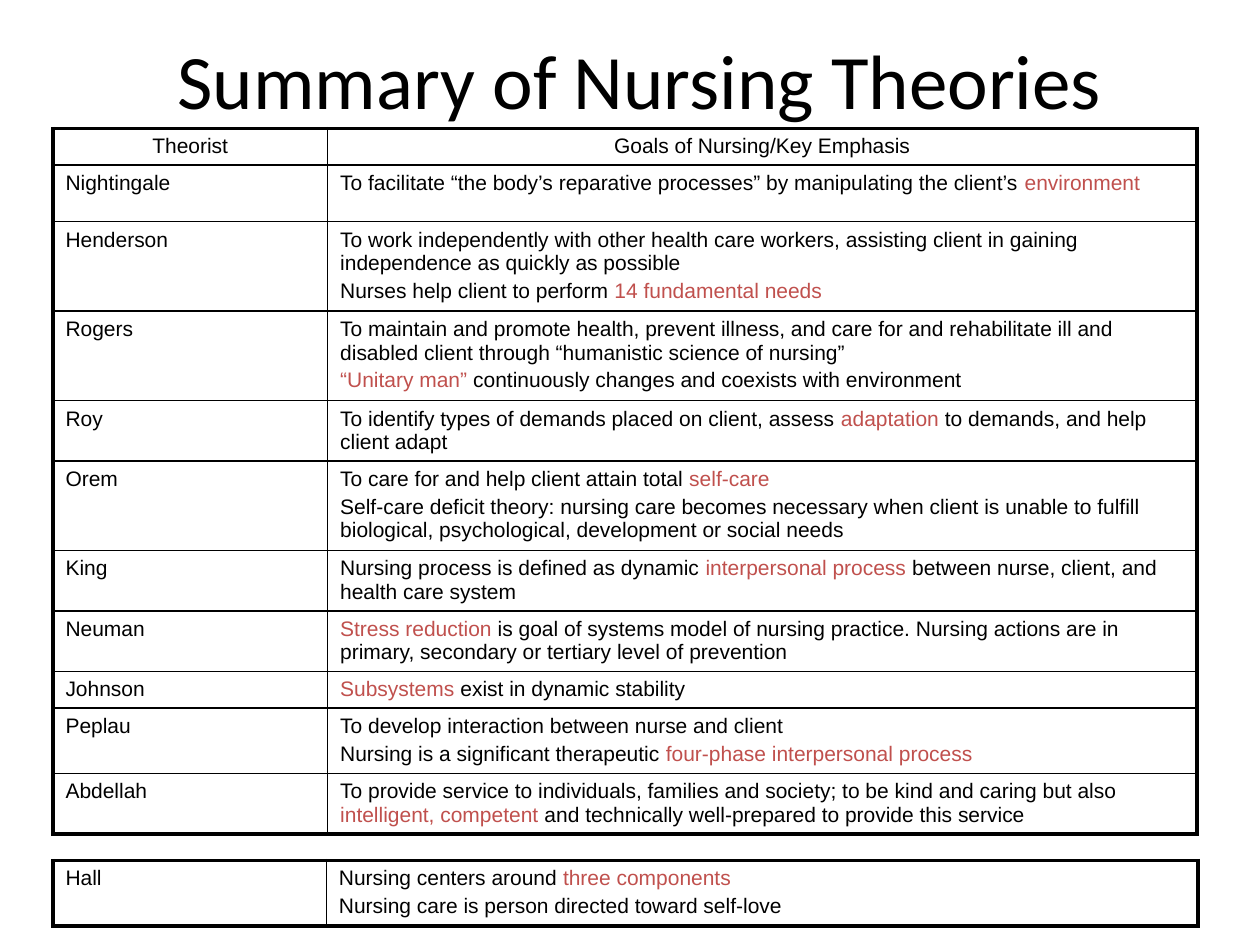
from lxml.etree import SubElement as SubEl
from pptx import Presentation
from pptx.dml.color import RGBColor
from pptx.enum.text import MSO_ANCHOR as ANCHOR, PP_ALIGN as ALIGN
from pptx.oxml.ns import qn
from pptx.util import Inches, Pt

BLACK, RED = "000000", "C0504D"
THICK, THIN = 2.25, 1

THEORIES = [
    (0.29, "Theorist", ["Goals of Nursing/Key Emphasis"]),
    (0.45, "Nightingale", [
        "To facilitate “the body’s reparative processes” by manipulating the client’s *environment*"]),
    (0.71, "Henderson", [
        "To work independently with other health care workers, assisting client in gaining "
        "independence as quickly as possible",
        "Nurses help client to perform *14 fundamental needs*"]),
    (0.71, "Rogers", [
        "To maintain and promote health, prevent illness, and care for and rehabilitate ill and "
        "disabled client through “humanistic science of nursing”",
        "*“Unitary man”* continuously changes and coexists with environment"]),
    (0.48, "Roy", [
        "To identify types of demands placed on client, assess *adaptation* to demands, "
        "and help client adapt"]),
    (0.71, "Orem", [
        "To care for and help client attain total *self-care*",
        "Self-care deficit theory: nursing care becomes necessary when client is unable to fulfill "
        "biological, psychological, development or social needs"]),
    (0.48, "King", [
        "Nursing process is defined as dynamic *interpersonal process* between nurse, client, "
        "and health care system"]),
    (0.48, "Neuman", [
        "*Stress reduction* is goal of systems model of nursing practice. Nursing actions are in "
        "primary, secondary or tertiary level of prevention"]),
    (0.29, "Johnson", ["*Subsystems *exist in dynamic stability"]),
    (0.52, "Peplau", [
        "To develop interaction between nurse and client",
        "Nursing is a significant therapeutic *four-phase interpersonal process*"]),
    (0.48, "Abdellah", [
        "To provide service to individuals, families and society; to be kind and caring but also "
        "*intelligent, competent* and technically well-prepared to provide this service"]),
]
HALL = [
    (0.52, "Hall", [
        "Nursing centers around *three components*",
        "Nursing care is person directed toward self-love"]),
]


def rgb(value):
    return RGBColor.from_string(value)


def add_run(p, text, color=BLACK, **fmt):
    r = p.add_run()
    r.text = text
    for name, value in fmt.items():
        setattr(r.font, name, value)
    r.font.color.rgb = rgb(color)


def add_title(s, text):
    sp = s.shapes.title
    box = {"left": 0.58, "top": 0, "width": 9, "height": 1.25}
    for name, value in box.items():
        setattr(sp, name, Inches(value))
    tf = sp.text_frame
    tf.vertical_anchor = ANCHOR.MIDDLE
    p = tf.paragraphs[0]
    p.alignment = ALIGN.CENTER
    add_run(p, text, name="Calibri", size=Pt(44))


def set_borders(cell, widths):
    tcPr = cell._tc.get_or_add_tcPr()
    for side, width in widths.items():
        ln = SubEl(tcPr, qn(f"a:ln{side}"), w=str(Pt(width)))
        fill = SubEl(ln, qn("a:solidFill"))
        SubEl(fill, qn("a:srgbClr"), val=BLACK)


def fill_cell(cell, paragraphs, align):
    tf = cell.text_frame
    for i, text in enumerate(paragraphs):
        p = tf.add_paragraph() if i else tf.paragraphs[0]
        p.alignment = align
        if i:
            p.space_before = Pt(2.4)
        for j, part in enumerate(text.split("*")):
            if part:
                add_run(p, part, RED if j % 2 else BLACK, name="Arial", size=Pt(12))


def add_theory_table(s, rows, top, col_widths, has_header=False):
    height = sum(row[0] for row in rows)
    frame = s.shapes.add_table(len(rows), 2, Inches(0.42), Inches(top),
                               Inches(sum(col_widths)), Inches(height))
    table = frame.table
    table.first_row = table.horz_banding = False
    for column, width in zip(table.columns, col_widths):
        column.width = Inches(width)
    last = len(rows) - 1
    for i, (row_height, theorist, goals) in enumerate(rows):
        table.rows[i].height = Inches(row_height)
        align = ALIGN.CENTER if has_header and i == 0 else ALIGN.LEFT
        for j, paragraphs in enumerate(([theorist], goals)):
            cell = table.cell(i, j)
            fill_cell(cell, paragraphs, align)
            outer = {"L": j == 0, "R": j == 1, "T": i == 0, "B": i == last}
            set_borders(cell, {side: THICK if edge else THIN for side, edge in outer.items()})
            cell.fill.background()


def main():
    prs = Presentation()
    prs.slide_width, prs.slide_height = Inches(10), Inches(7.5)
    s = prs.slides.add_slide(prs.slide_layouts[5])
    add_title(s, "Summary of Nursing Theories")
    add_theory_table(s, THEORIES, 1.02, (2.18, 6.9), has_header=True)
    add_theory_table(s, HALL, 6.83, (2.17, 6.92))
    prs.save("out.pptx")


if __name__ == "__main__":
    main()
